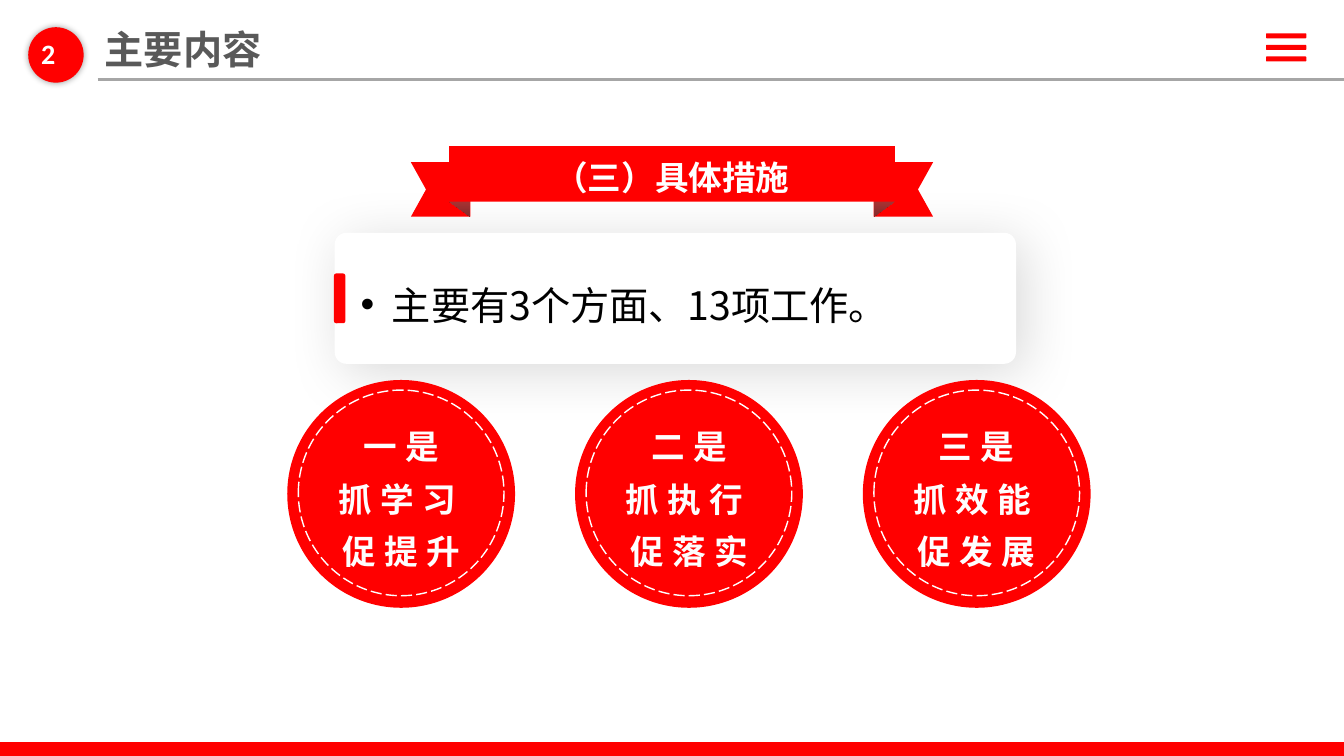
from pptx import Presentation
from pptx.dml.color import RGBColor
from pptx.enum.dml import MSO_LINE_DASH_STYLE as Dash
from pptx.enum.shapes import MSO_CONNECTOR as Connector, MSO_SHAPE as Shape
from pptx.enum.text import MSO_ANCHOR as Anchor, PP_ALIGN as Align
from pptx.oxml.ns import qn
from pptx.util import Inches, Pt
from lxml.etree import SubElement

# Grid of tenth-inch cells
CELL = Inches(0.1)
COLS, ROWS = 133.33, 75
CENTRE = COLS / 2
RED, WHITE = "FF0000", "FFFFFF"
CJK = "Noto Sans CJK SC"
MEASURES = [("一是", "抓学习促提升"), ("二是", "抓执行促落实"), ("三是", "抓效能促发展")]


def cells(*counts):
    return [round(count * CELL) for count in counts]


def paint(colour_format, colour):
    colour_format.rgb = RGBColor.from_string(colour)


def fill_plain(shape, colour):
    shape.shadow.inherit = False
    shape.line.fill.background()
    if colour:
        shape.fill.solid()
        paint(shape.fill.fore_color, colour)
    else:
        shape.fill.background()


def set_line(line, colour, width, dash=None):
    paint(line.color, colour)
    line.width = Pt(width)
    if dash:
        line.dash_style = dash


def add_block(page, kind, at, colour=None, corner=None):
    block = page.shapes.add_shape(kind, *cells(*at))
    fill_plain(block, colour)
    if corner is not None:
        block.adjustments[0] = corner
    return block


def cast_shadow(shape, alpha, blur, distance=0, angle=0):
    effects = shape._element.spPr.find(qn("a:effectLst"))
    shadow = SubElement(effects, qn("a:outerShdw"), blurRad=str(Pt(blur)),
                        dist=str(Pt(distance)), dir=str(angle * 60000),
                        algn="ctr", rotWithShape="0")
    black = SubElement(shadow, qn("a:srgbClr"), val="000000")
    SubElement(black, qn("a:alpha"), val=str(alpha * 1000))


def add_bullet(para, indent):
    properties = para._p.get_or_add_pPr()
    properties.set("marL", str(Inches(indent)))
    properties.set("indent", str(-Inches(indent)))
    SubElement(properties, qn("a:buFont"), typeface="Arial")
    SubElement(properties, qn("a:buChar"), char="•")


def write(box, *lines, size=24, font=CJK, colour=WHITE, bold=True,
          align=Align.LEFT, leading=None, tracking=None, bullet=None):
    frame = box.text_frame
    frame.word_wrap = True
    frame.vertical_anchor = Anchor.TOP
    for number, line in enumerate(lines):
        para = frame.add_paragraph() if number else frame.paragraphs[0]
        para.alignment = align
        if leading:
            para.line_spacing = leading
        if bullet:
            add_bullet(para, bullet)
        span = para.add_run()
        span.text = line
        span.font.size, span.font.bold, span.font.name = Pt(size), bold, font
        paint(span.font.color, colour)
        properties = span._r.get_or_add_rPr()
        SubElement(properties, qn("a:ea"), typeface=font)
        if tracking:
            properties.set("spc", str(tracking * 100))


def add_text(page, at, *lines, **style):
    box = page.shapes.add_textbox(*cells(*at))
    write(box, *lines, **style)
    return box


def add_outline(page, points, colour=None):
    start, *others = [tuple(cells(*point)) for point in points]
    builder = page.shapes.build_freeform(*start)
    builder.add_line_segments(others, close=True)
    outline = builder.convert_to_shape()
    fill_plain(outline, colour)
    return outline


def add_frame(page):
    # Menu icon, rule and footer band
    for bar in range(3):
        add_block(page, Shape.ROUNDED_RECTANGLE, (125.6, 3.3 + 1.15 * bar, 4, 0.5), RED)
    rule = page.shapes.add_connector(Connector.STRAIGHT, *cells(9.7, 7.9, COLS, 7.9))
    set_line(rule.line, "A6A6A6", 1.75)
    SubElement(rule._element.spPr, qn("a:effectLst"))
    band = add_block(page, Shape.RECTANGLE, (0, ROWS - 1.3, COLS, 1.3), RED)
    set_line(band.line, RED, 1)


def add_heading(page):
    title = page.shapes.title
    title.left, title.top, title.width, title.height = cells(9.4, 2, 48.9, 5.7)
    write(title, "主要内容", size=28, colour="595959")
    badge = add_block(page, Shape.OVAL, (2.8, 2.7, 5.5, 5.5), RED)
    cast_shadow(badge, 40, 5)
    add_text(page, (3.1, 3.1, 4.9, 4.4), "2", size=20, font="Calibri", align=Align.JUSTIFY)


def add_card(page):
    card = add_block(page, Shape.ROUNDED_RECTANGLE, (33.2, 23.1, 67.6, 13), WHITE, 0.09)
    cast_shadow(card, 15, 40, 8, 45)
    marker = add_block(page, Shape.ROUNDED_RECTANGLE, (33.2, 27.2, 1, 4.8), RED)
    set_line(marker.line, RED, 1)
    add_text(page, (34.8, 22.7, 63.3, 10.4), "主要有3个方面、13项工作。", size=28,
             colour="000000", bold=False, leading=2.0, bullet=0.31)


def add_ribbon(page):
    # Each side is mirrored about the slide's centre
    tail = [(25.9, 16.1), (20, 16.1), (20, 21.5), (25.9, 21.5), (24.4, 18.8)]
    fold = [(22.1, 16.6), (20, 16.6), (20, 21.5), (22.1, 20)]
    for side in (1, -1):
        add_outline(page, [(CENTRE + side * x, y) for x, y in tail], RED)
        crease = add_outline(page, [(CENTRE + side * x, y) for x, y in fold])
        crease.fill.gradient()
        crease.fill.gradient_angle = 270
        for stop, colour in zip(crease.fill.gradient_stops, ("FE4444", "832B2B")):
            paint(stop.color, colour)
        crease.fill.gradient_stops[0].position = 0
        crease.fill.gradient_stops[1].position = 1
    add_block(page, Shape.RECTANGLE, (CENTRE - 22.1, 14.5, 44.2, 5.5), RED)
    add_text(page, (CENTRE - 20, 14.3, 40, 5.8), "（三）具体措施", align=Align.CENTER, leading=1.2)


def add_measure(page, middle, lines):
    add_block(page, Shape.OVAL, (middle - 11.3, 37.7, 22.6, 22.6), RED)
    ring = add_block(page, Shape.OVAL, (middle - 10.2, 38.7, 20.4, 20.4))
    set_line(ring.line, WHITE, 1, Dash.LONG_DASH)
    add_text(page, (middle - 8, 40.6, 16, 16.7), *lines, colour="FEFDFD",
             align=Align.CENTER, leading=1.3, tracking=6)


def main():
    deck = Presentation()
    deck.slide_width, deck.slide_height = cells(COLS, ROWS)
    page = deck.slides.add_slide(deck.slide_layouts[5])
    add_frame(page)
    add_heading(page)
    add_card(page)
    add_ribbon(page)
    for number, lines in enumerate(MEASURES):
        add_measure(page, 39.8 + 28.55 * number, lines)
    deck.save("out.pptx")


if __name__ == "__main__":
    main()
